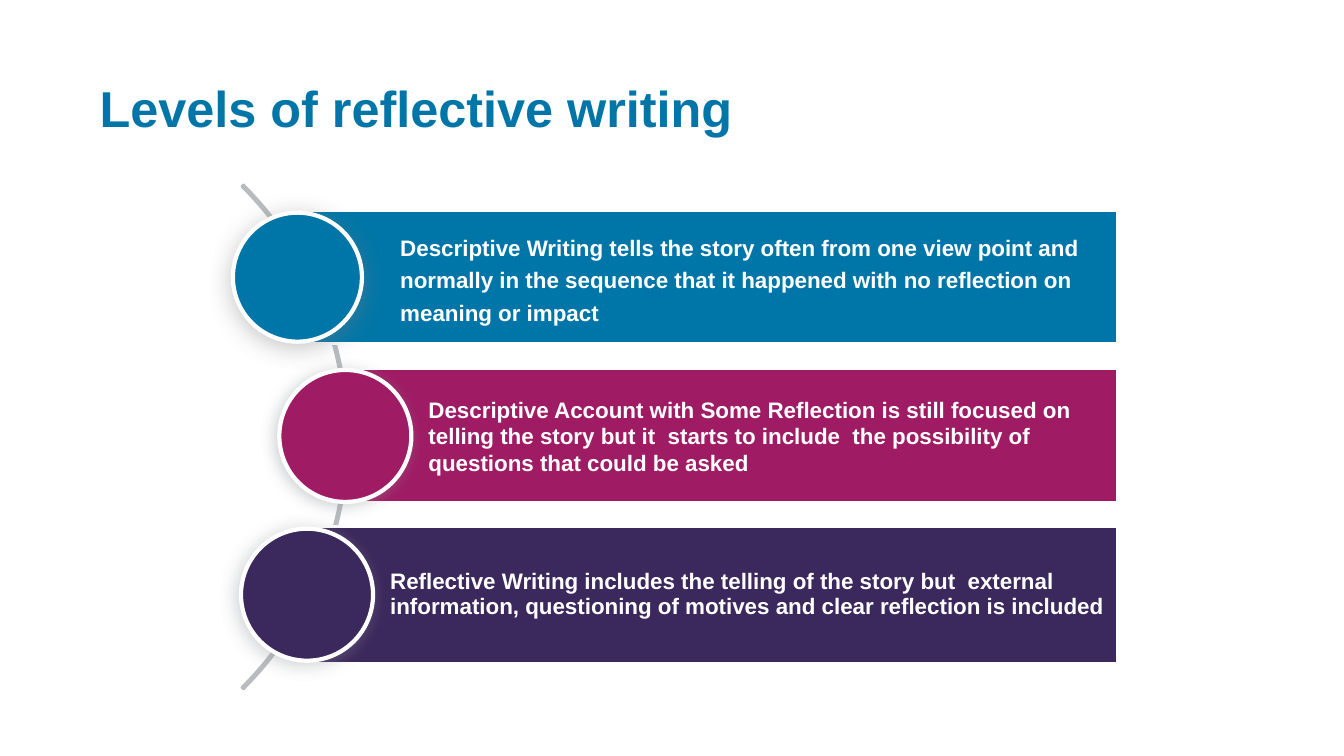
from lxml import etree
from pptx import Presentation
from pptx import util as u
from pptx.dml.color import RGBColor
from pptx.enum import shapes, text
from pptx.oxml.ns import qn

COLORS = {"blue": "0076A8", "magenta": "9F1C64", "purple": "3B285C",
          "white": "FFFFFF", "arc": "B9BBBE", "gray": "808080", "silver": "96999E"}
FONT = "Arial"
BAR_RIGHT = 11.08

LEVELS = [
    {"wording": "Descriptive Writing tells the story often from one view point and normally "
                "in the sequence that it happened with no reflection on meaning or impact",
     "color": "blue", "bar": (3.04, 2.09, 1.32), "circle": (2.31, 1.28),
     "shadow": ("gray", 17.5, 102), "spacing": 1.2, "indent": 0.1},
    {"wording": "Descriptive Account with Some Reflection is still focused on telling the story "
                "but it  starts to include  the possibility of questions that could be asked",
     "color": "magenta", "bar": (3.42, 3.66, 1.33), "circle": (2.77, 1.31),
     "shadow": ("silver", 10.8, 153), "spacing": 1.0, "indent": 0},
    {"wording": "Reflective Writing includes the telling of the story but  external information, "
                "questioning of motives and clear reflection is included",
     "color": "purple", "bar": (3.04, 5.22, 1.36), "circle": (2.39, 1.31),
     "shadow": ("silver", 13, 149), "spacing": 0.9, "indent": 0},
]


def rgb(name):
    """Return the named colour."""
    return RGBColor.from_string(COLORS[name])


def write_text(shape, wording, size, color, spacing=1.0, before=0,
               anchor=text.MSO_ANCHOR.TOP, margins=(0.1, 0.05, 0.1, 0.05)):
    """Fill a shape with one bold, left-aligned paragraph."""
    frame = shape.text_frame
    frame.word_wrap = True
    frame.vertical_anchor = anchor
    (frame.margin_left, frame.margin_top,
     frame.margin_right, frame.margin_bottom) = map(u.Inches, margins)
    paragraph = frame.paragraphs[0]
    paragraph.alignment = text.PP_ALIGN.LEFT
    paragraph.line_spacing = spacing
    paragraph.space_before = u.Pt(before)
    run = paragraph.add_run()
    run.text = wording
    run.font.name, run.font.size, run.font.bold = FONT, u.Pt(size), True
    run.font.color.rgb = rgb(color)


def add_outlined_shape(slide, kind, box, line, width, fill=None):
    """Add a preset shape with an outline and an optional fill."""
    shape = slide.shapes.add_shape(kind, *map(u.Inches, box))
    shape.shadow.inherit = False
    if fill:
        shape.fill.solid()
        shape.fill.fore_color.rgb = rgb(fill)
    else:
        shape.fill.background()
    shape.line.color.rgb = rgb(line)
    shape.line.width = u.Pt(width)
    return shape


def add_shadow(shape, color, blur, direction):
    """Give a shape a soft outer shadow."""
    effects = shape._element.spPr.find(qn("a:effectLst"))
    shadow = etree.SubElement(effects, qn("a:outerShdw"), blurRad=str(u.Pt(blur)),
                              dist=str(u.Pt(3)), dir=str(direction * 60000), rotWithShape="0")
    tint = etree.SubElement(shadow, qn("a:srgbClr"), val=COLORS[color])
    etree.SubElement(tint, qn("a:alpha"), val="43000")


def add_title(slide, box):
    """Add the slide heading."""
    title = slide.shapes.add_textbox(*map(u.Inches, box))
    write_text(title, "Levels of reflective writing", 36, "blue", before=4)


def add_arc(slide, box):
    """Add the thin arc that links the circles."""
    arc = add_outlined_shape(slide, shapes.MSO_SHAPE.BLOCK_ARC, box, "arc", 2)
    for index, value in enumerate((189, 27, 0.003)):
        arc.adjustments[index] = value


def add_level(slide, level):
    """Add one bar with its wording and the circle centred on its height."""
    left, top, height = level["bar"]
    bar = add_outlined_shape(slide, shapes.MSO_SHAPE.RECTANGLE,
                             (left, top, BAR_RIGHT - left, height), "white", 2, level["color"])
    write_text(bar, level["wording"], 16, "white", level["spacing"],
               anchor=text.MSO_ANCHOR.MIDDLE,
               margins=(0.83 + level["indent"], 0.04, 0.04, 0.04))
    circle_left, diameter = level["circle"]
    circle_box = (circle_left, top + (height - diameter) / 2, diameter, diameter)
    circle = add_outlined_shape(slide, shapes.MSO_SHAPE.OVAL, circle_box,
                                "white", 3, level["color"])
    add_shadow(circle, *level["shadow"])


def main():
    """Build and save the slide."""
    presentation = Presentation()
    presentation.slide_width, presentation.slide_height = u.Inches(13.33), u.Inches(7.5)
    slide = presentation.slides.add_slide(presentation.slide_layouts[6])
    add_title(slide, (0.89, 0.72, 8.94, 0.84))
    add_arc(slide, (-3.62, 0.8, 7.07, 7.07))
    for level in LEVELS:
        add_level(slide, level)
    presentation.save("out.pptx")


if __name__ == "__main__":
    main()
